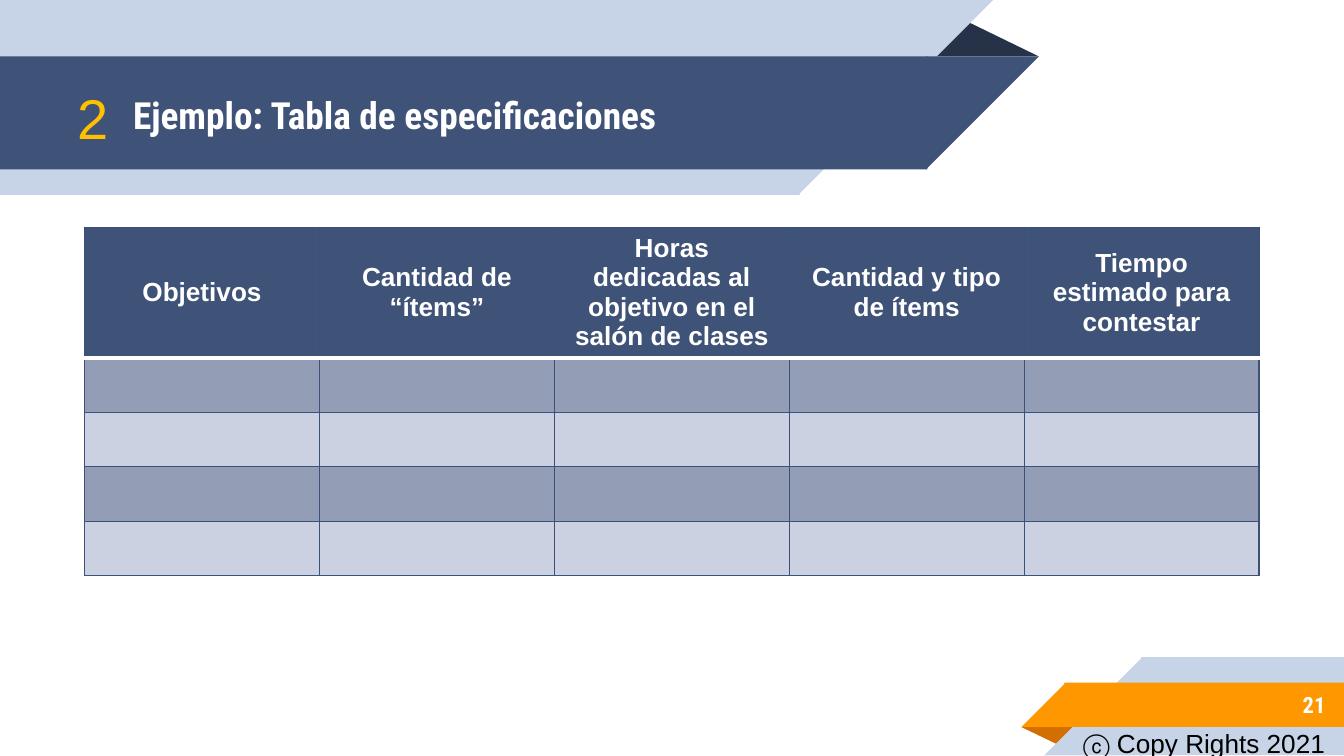
import pptx
import pptx.util
import pptx.dml.color
import pptx.enum.shapes
import pptx.enum.text
import pptx.oxml
import pptx.oxml.ns

Inches = pptx.util.Inches
RGBColor = pptx.dml.color.RGBColor
SHAPE = pptx.enum.shapes.MSO_SHAPE
ALIGN = pptx.enum.text.PP_ALIGN
ANCHOR = pptx.enum.text.MSO_ANCHOR
AUTO = pptx.enum.text.MSO_AUTO_SIZE

NAVY = RGBColor(0x3F, 0x53, 0x78)
DARK = RGBColor(0x26, 0x32, 0x48)
PALE = RGBColor(0xC7, 0xD3, 0xE6)
ORANGE = RGBColor(0xFF, 0x98, 0x00)
RUST = RGBColor(0xD2, 0x6F, 0x00)
GOLD = RGBColor(0xFF, 0xC0, 0x00)
WHITE = RGBColor(0xFF, 0xFF, 0xFF)
BLACK = RGBColor(0x00, 0x00, 0x00)
BORDER = RGBColor(0x3C, 0x51, 0x77)
ROW_DARK = RGBColor(0x93, 0x9E, 0xB6)
ROW_LIGHT = RGBColor(0xCB, 0xD1, 0xE1)

OVERLAP = 0.01
HEADINGS = [
    "Objetivos",
    "Cantidad de “ítems”",
    "Horas dedicadas al objetivo en el salón de clases",
    "Cantidad y tipo de ítems",
    "Tiempo estimado para contestar",
]


def write_text(tf, text, size=14, font="Arial", color=BLACK, bold=False,
               align=ALIGN.LEFT):
    """Put one formatted run of text into a text frame."""
    p = tf.paragraphs[0]
    p.alignment = align
    r = p.add_run()
    r.text = text
    r.font.size = pptx.util.Pt(size)
    r.font.name = font
    r.font.bold = bold
    r.font.color.rgb = color


def add_label(s, box, text, inset=0.05, wrap=False, anchor=ANCHOR.TOP, **fmt):
    """Add a text box with equal top and bottom insets."""
    tf = s.shapes.add_textbox(*map(Inches, box)).text_frame
    tf.word_wrap = wrap
    tf.vertical_anchor = anchor
    tf.margin_top = tf.margin_bottom = Inches(inset)
    write_text(tf, text, **fmt)


def add_solid(s, kind, box, color, rotation=0):
    """Add a plain filled shape without outline or shadow."""
    sp = s.shapes.add_shape(kind, *map(Inches, box))
    sp.shadow.inherit = False
    sp.fill.solid()
    sp.fill.fore_color.rgb = color
    sp.line.fill.background()
    sp.rotation = rotation
    return sp


def add_fold(s, box, color, rotation=0):
    """Add the small triangle that shades a ribbon fold."""
    sp = add_solid(s, SHAPE.ISOSCELES_TRIANGLE, box, color, rotation)
    sp.adjustments[0] = 0.324


def add_ribbon(s, box, color, slant_left=False):
    """Fill a box with a band whose left or right end is cut at 45 degrees."""
    x, y, w, h = box
    if slant_left:
        bar_x, tip_x, turn = x + h - OVERLAP, x, 270
    else:
        bar_x, tip_x, turn = x, x + w - h, 90
    add_solid(s, SHAPE.RECTANGLE, (bar_x, y, w - h + OVERLAP, h), color)
    add_solid(s, SHAPE.RIGHT_TRIANGLE, (tip_x, y, h, h), color, turn)


def add_header(s, box):
    """Draw the title ribbon with its number and title."""
    x, y, w, h = box
    add_fold(s, (x + 6.88, y + 0.14, 0.85, 0.28), DARK)
    add_ribbon(s, (x, y, 7.39, h), PALE)
    add_ribbon(s, (x, y + 0.42, w, 0.84), NAVY)
    title = s.shapes.title
    title.left, title.top, title.width, title.height = map(
        Inches, (x + 0.89, y + 0.43, 6.01, 0.84))
    tf = title.text_frame
    tf.auto_size = AUTO.NONE
    tf.vertical_anchor = ANCHOR.MIDDLE
    tf.margin_left = tf.margin_right = Inches(0.1)
    tf.margin_top = tf.margin_bottom = Inches(0.1)
    write_text(tf, "Ejemplo: Tabla de especificaciones", size=20,
               font="Roboto Condensed", color=WHITE, bold=True)
    title.element.getparent().append(title.element)
    add_label(s, (x + 0.48, y + 0.57, 0.44, 0.61), "2", size=30, color=GOLD)


def add_footer(s, box):
    """Draw the corner ribbon with the slide number and copyright line."""
    x, y, w, h = box
    add_fold(s, (x, y + 0.52, 0.43, 0.14), RUST, 180)
    add_ribbon(s, (x + 0.17, y, w - 0.17, h), PALE, slant_left=True)
    add_ribbon(s, (x, y + 0.19, w, 0.33), ORANGE, slant_left=True)
    add_label(s, (x + 0.73, y + 0.18, 1.63, 0.35), "21", inset=0.1, wrap=True,
              anchor=ANCHOR.MIDDLE, size=12, font="Roboto Condensed",
              color=WHITE, bold=True, align=ALIGN.RIGHT)
    add_label(s, (x + 0.36, y + 0.47, 2.01, 0.34), "ⓒ Copy Rights 2021")


def set_borders(cell, **special):
    """Outline a cell, with special giving (colour, points) for single sides."""
    tcPr = cell._tc.get_or_add_tcPr()
    for i, side in enumerate("LRTB"):
        color, points = special.get(side, (BORDER, 0.75))
        tcPr.insert(i, pptx.oxml.parse_xml(
            f'<a:ln{side} {pptx.oxml.ns.nsdecls("a")} w="{pptx.util.Pt(points)}">'
            f'<a:solidFill><a:srgbClr val="{color}"/></a:solidFill></a:ln{side}>'))


def add_spec_table(s, box, heights):
    """Add the specification table with headings and banded empty rows."""
    columns = len(HEADINGS)
    table = s.shapes.add_table(len(heights), columns, *map(Inches, box)).table
    for column in table.columns:
        column.width = Inches(box[2] / columns)
    rule = (WHITE, 2)
    for i, height in enumerate(heights):
        table.rows[i].height = Inches(height)
        for j, heading in enumerate(HEADINGS):
            cell = table.cell(i, j)
            cell.fill.solid()
            if i == 0:
                cell.fill.fore_color.rgb = NAVY
                cell.vertical_anchor = ANCHOR.MIDDLE
                cell.margin_top = cell.margin_bottom = Inches(0.02)
                write_text(cell.text_frame, heading, color=WHITE, bold=True,
                           align=ALIGN.CENTER)
                set_borders(cell, B=rule)
            else:
                cell.fill.fore_color.rgb = ROW_DARK if i % 2 else ROW_LIGHT
                cell.text_frame.paragraphs[0].font.size = pptx.util.Pt(14)
                set_borders(cell, **({"T": rule} if i == 1 else {}))


def main():
    """Build the slide and save it."""
    prs = pptx.Presentation()
    prs.slide_width = Inches(10)
    prs.slide_height = Inches(10) * 9 // 16
    s = prs.slides.add_slide(prs.slide_layouts[5])
    add_footer(s, (7.6, 4.89, 2.4, 0.73))
    add_header(s, (0, 0, 7.73, 1.45))
    add_spec_table(s, (0.63, 1.69, 8.74, 2.59), [0.97] + [0.405] * 4)
    prs.save("out.pptx")


if __name__ == "__main__":
    main()
